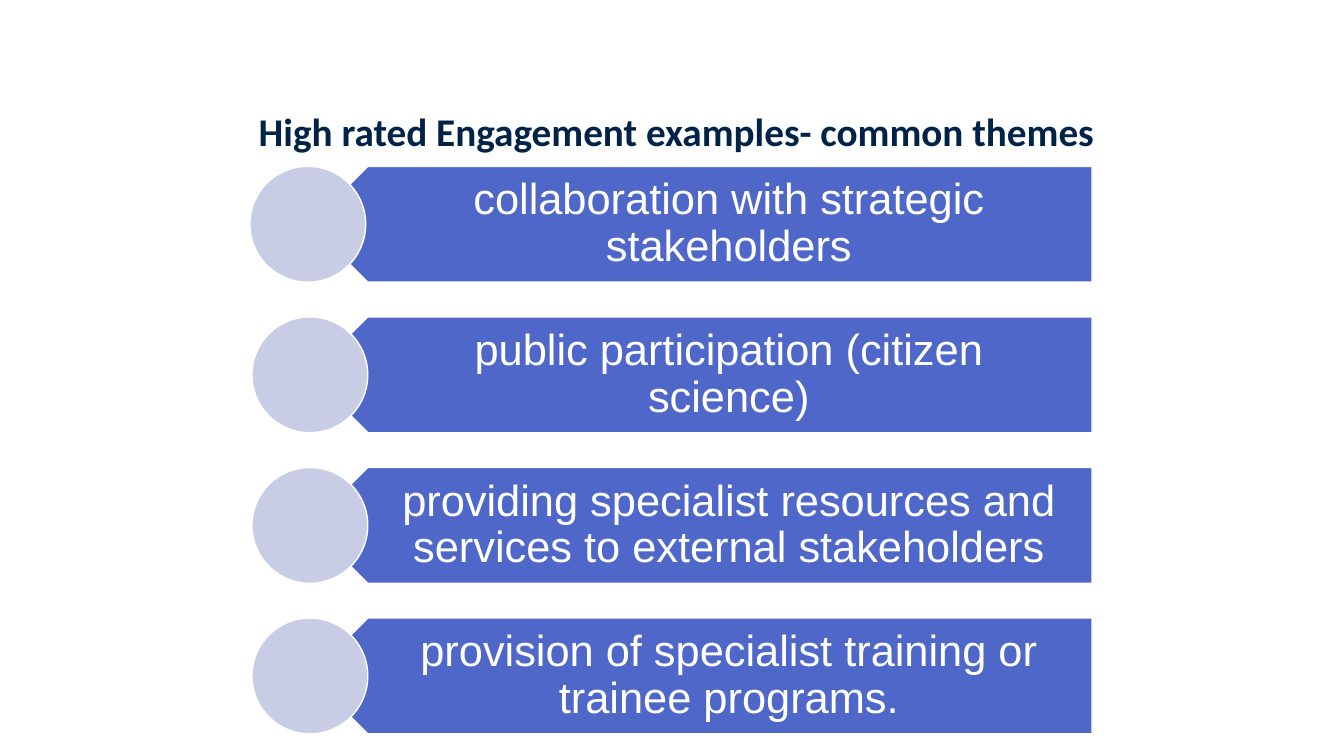
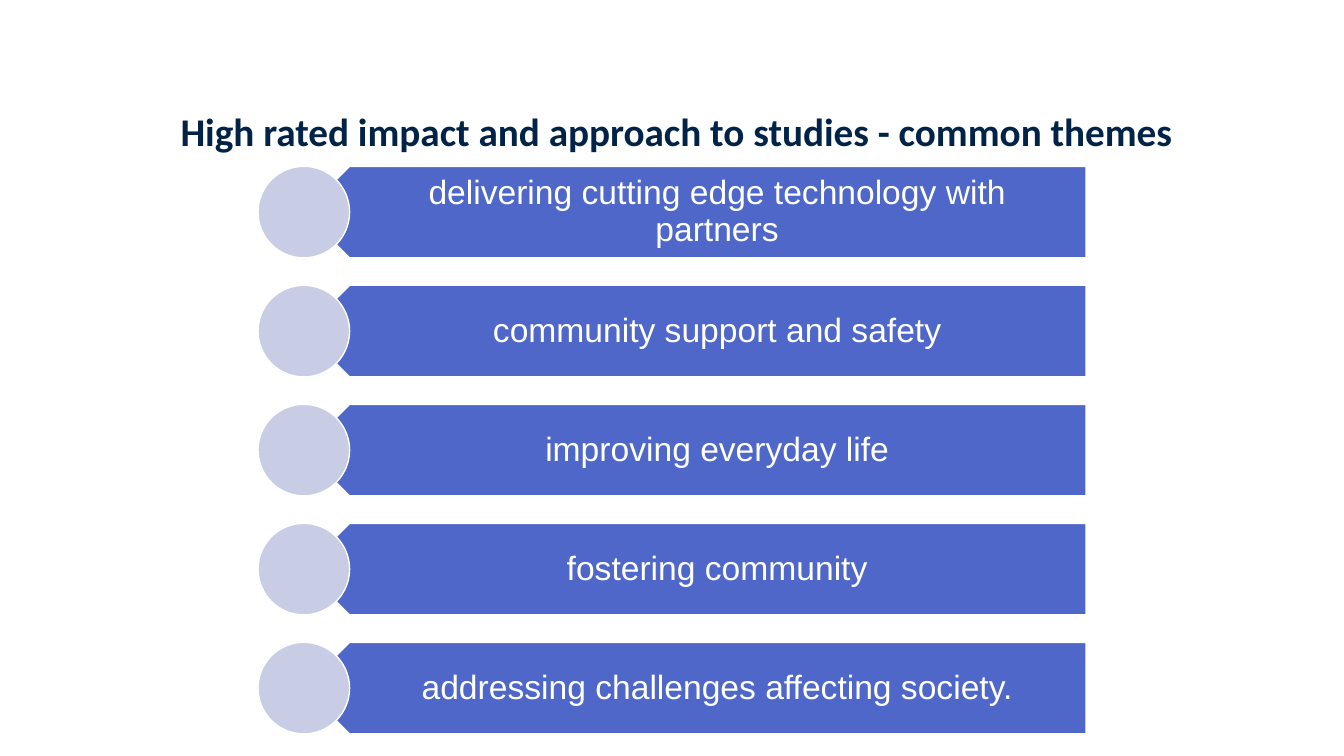
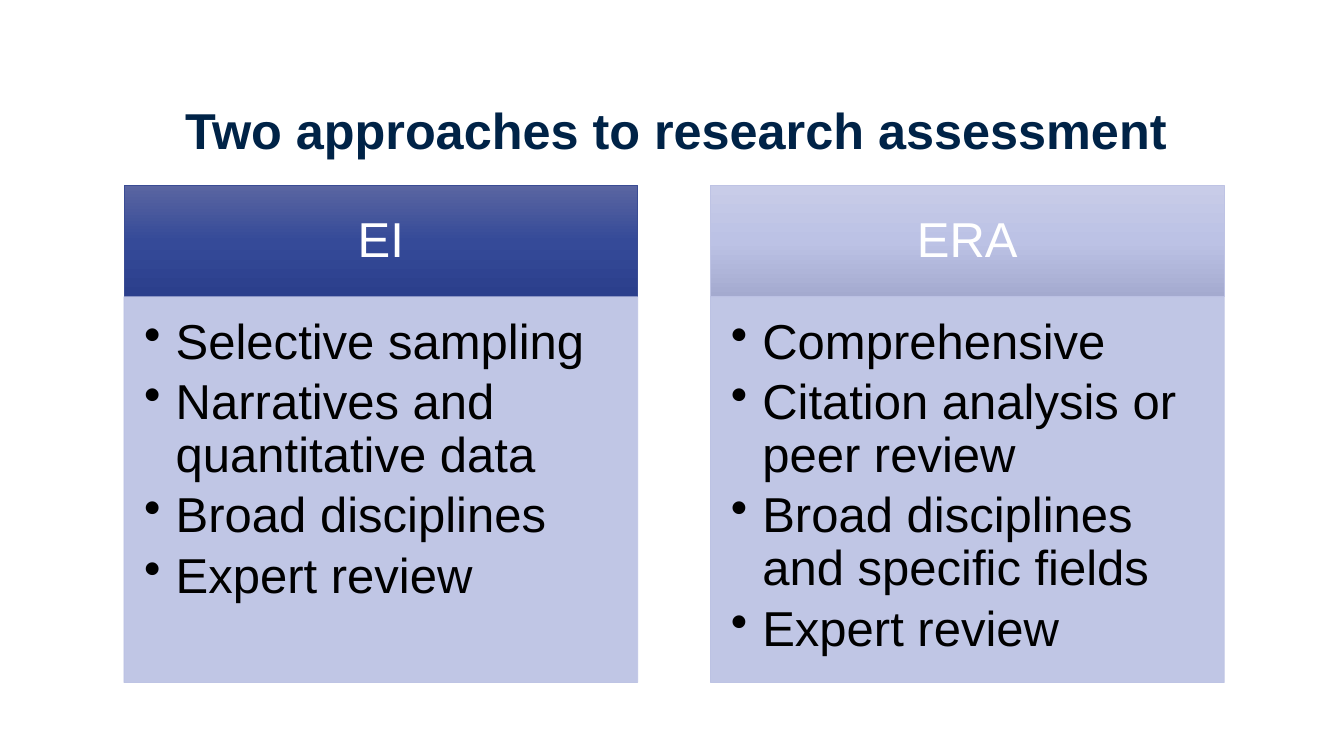
from copy import deepcopy
from dataclasses import dataclass

from lxml import etree
from pptx import Presentation
from pptx.dml.color import RGBColor
from pptx.enum import shapes, text
from pptx.oxml.ns import qn
from pptx.util import Pt


@dataclass(frozen=True)
class Theme:
    navy: str = "002347"
    banner: str = "4E67C8"
    disc: str = "C8CDE5"
    panel: str = "BAC0E3"
    white: str = "FFFFFF"
    black: str = "000000"
    ei_gradient: tuple = ("5A65A1", "354A98", "2B3F8C")
    ei_line: str = "3A4C94"
    era_gradient: tuple = ("C8CCE8", "BCC2E5", "A4AACF")
    era_line: str = "BEC3E4"
    heading_font: str = "Calibri"
    body_font: str = "Arial"
    column_size: int = 35
    line_spacing: float = 0.9


THEME = Theme()
SLIDE_WIDTH, SLIDE_HEIGHT = 960, 540
TITLE_BOX = (90, 72, 786, 47)
LIST_BOX = (0, 118.8, SLIDE_WIDTH, 405.4)
COLUMNS_BOX = (88.5, 132.5, 786, 355)


def rgb(value):
    return RGBColor.from_string(value)


# Shared building blocks
def add_shape(page, kind, box, fill, line, line_width):
    shape = page.shapes.add_shape(kind, *map(Pt, box))
    shape.shadow.inherit = False
    if isinstance(fill, tuple):
        shape.fill.gradient()
        shape.fill.gradient_angle = 270
        stops = shape._element.spPr.find(qn("a:gradFill")).find(qn("a:gsLst"))
        stops.insert(1, deepcopy(stops[0]))
        for stop, colour, position in zip(shape.fill.gradient_stops, fill, (0, 0.5, 1)):
            stop.color.rgb = rgb(colour)
            stop.position = position
    else:
        shape.fill.solid()
        shape.fill.fore_color.rgb = rgb(fill)
    shape.line.color.rgb = rgb(line)
    shape.line.width = Pt(line_width)
    return shape


def set_opacity(shape, percent):
    for colour in shape._element.spPr.iter(qn("a:srgbClr")):
        etree.SubElement(colour, qn("a:alpha")).set("val", str(percent * 1000))


def add_bullet(para, indent):
    properties = para._p.get_or_add_pPr()
    properties.set("marL", str(Pt(indent)))
    properties.set("indent", str(-Pt(indent)))
    etree.SubElement(properties, qn("a:buChar")).set("char", "•")


def write(shape, lines, size, colour, insets, font=THEME.body_font, bold=False,
          bullet_indent=None):
    frame = shape.text_frame
    frame.word_wrap = True
    frame.margin_left, frame.margin_top, frame.margin_right, frame.margin_bottom = map(Pt, insets)
    bulleted = bullet_indent is not None
    anchor = text.MSO_ANCHOR
    frame.vertical_anchor = anchor.TOP if bulleted else anchor.MIDDLE
    for index, line in enumerate(lines):
        para = frame.add_paragraph() if index else frame.paragraphs[0]
        if bulleted:
            add_bullet(para, bullet_indent)
            para.space_after = Pt(0.15 * size)
        para.alignment = text.PP_ALIGN.LEFT if bulleted else text.PP_ALIGN.CENTER
        para.line_spacing = THEME.line_spacing
        span = para.add_run()
        span.text = line
        span.font.name, span.font.size, span.font.bold = font, Pt(size), bold
        span.font.color.rgb = rgb(colour)


def add_page(deck, title, font, size):
    page = deck.slides.add_slide(deck.slide_layouts[6])
    box = page.shapes.add_textbox(*map(Pt, TITLE_BOX))
    write(box, [title], size, THEME.navy, (7.2, 3.6, 7.2, 3.6), font, True)
    return page


# Slides listing themes on arrow banners with discs
def add_banner_row(page, box, label, size, disc_shift):
    left, top, width, height = box
    banner_left = left + height / 2
    banner_width = width - height / 2
    banner = add_shape(page, shapes.MSO_SHAPE.PENTAGON,
                       (banner_left, top, banner_width, height), THEME.banner, THEME.white, 1)
    banner.rotation = 180
    label_box = page.shapes.add_textbox(
        *map(Pt, (banner_left + height / 4, top, banner_width - height / 4, height)))
    padding = 0.3 * size
    write(label_box, [label], size, THEME.white, (0.44 * height, padding, 0.56 * size, padding))
    add_shape(page, shapes.MSO_SHAPE.OVAL, (left + disc_shift, top, height, height),
              THEME.disc, THEME.white, 1)


def add_theme_list(page, box, labels, size, first_disc_shift=0):
    left, top, width, height = box
    gap_ratio = 0.3
    row_height = height / (len(labels) + gap_ratio * (len(labels) - 1))
    row_width = 558.7 + row_height / 2
    row_left = left + (width - row_width) / 2
    for index, label in enumerate(labels):
        row_top = top + index * row_height * (1 + gap_ratio)
        add_banner_row(page, (row_left, row_top, row_width, row_height), label, size,
                       0 if index else first_disc_shift)


# Slide comparing two columns
def add_column(page, box, heading, points, gradient, line):
    left, top, width, height = box
    head_height = 79.5
    rectangle = shapes.MSO_SHAPE.RECTANGLE
    head = add_shape(page, rectangle, (left, top, width, head_height), gradient, line, 0.5)
    write(head, [heading], THEME.column_size, THEME.white, (19.5, 11.5, 19.5, 11.5))
    body = add_shape(page, rectangle, (left, top + head_height, width, height - head_height),
                     THEME.panel, THEME.panel, 0.5)
    set_opacity(body, 90)
    write(body, points, THEME.column_size, THEME.black, (14.5, 14.5, 19.5, 22.5),
          bullet_indent=22.5)


def add_comparison(page, box, columns):
    left, top, width, height = box
    gap = 52
    column_width = (width - gap * (len(columns) - 1)) / len(columns)
    for index, column in enumerate(columns):
        column_left = left + index * (column_width + gap)
        add_column(page, (column_left, top, column_width, height), *column)


def main():
    deck = Presentation()
    deck.slide_width, deck.slide_height = Pt(SLIDE_WIDTH), Pt(SLIDE_HEIGHT)

    page = add_page(deck, "High rated Engagement examples- common themes",
                    THEME.heading_font, 28)
    add_theme_list(page, LIST_BOX, [
        "collaboration with strategic stakeholders",
        "public participation (citizen science)",
        "providing specialist resources and services to external stakeholders",
        "provision of specialist training or trainee programs.",
    ], 31, first_disc_shift=-1.5)

    page = add_page(deck, "High rated impact and approach to studies - common themes",
                    THEME.heading_font, 28)
    add_theme_list(page, LIST_BOX, [
        "delivering cutting edge technology with partners",
        "community support and safety",
        "improving everyday life",
        "fostering community",
        "addressing challenges affecting society.",
    ], 24)

    page = add_page(deck, "Two approaches to research assessment", THEME.body_font, 36)
    add_comparison(page, COLUMNS_BOX, [
        ("EI", ["Selective sampling", "Narratives and quantitative data",
                "Broad disciplines", "Expert review"],
         THEME.ei_gradient, THEME.ei_line),
        ("ERA", ["Comprehensive", "Citation analysis or peer review",
                 "Broad disciplines and specific fields", "Expert review"],
         THEME.era_gradient, THEME.era_line),
    ])

    deck.save("out.pptx")


if __name__ == "__main__":
    main()
